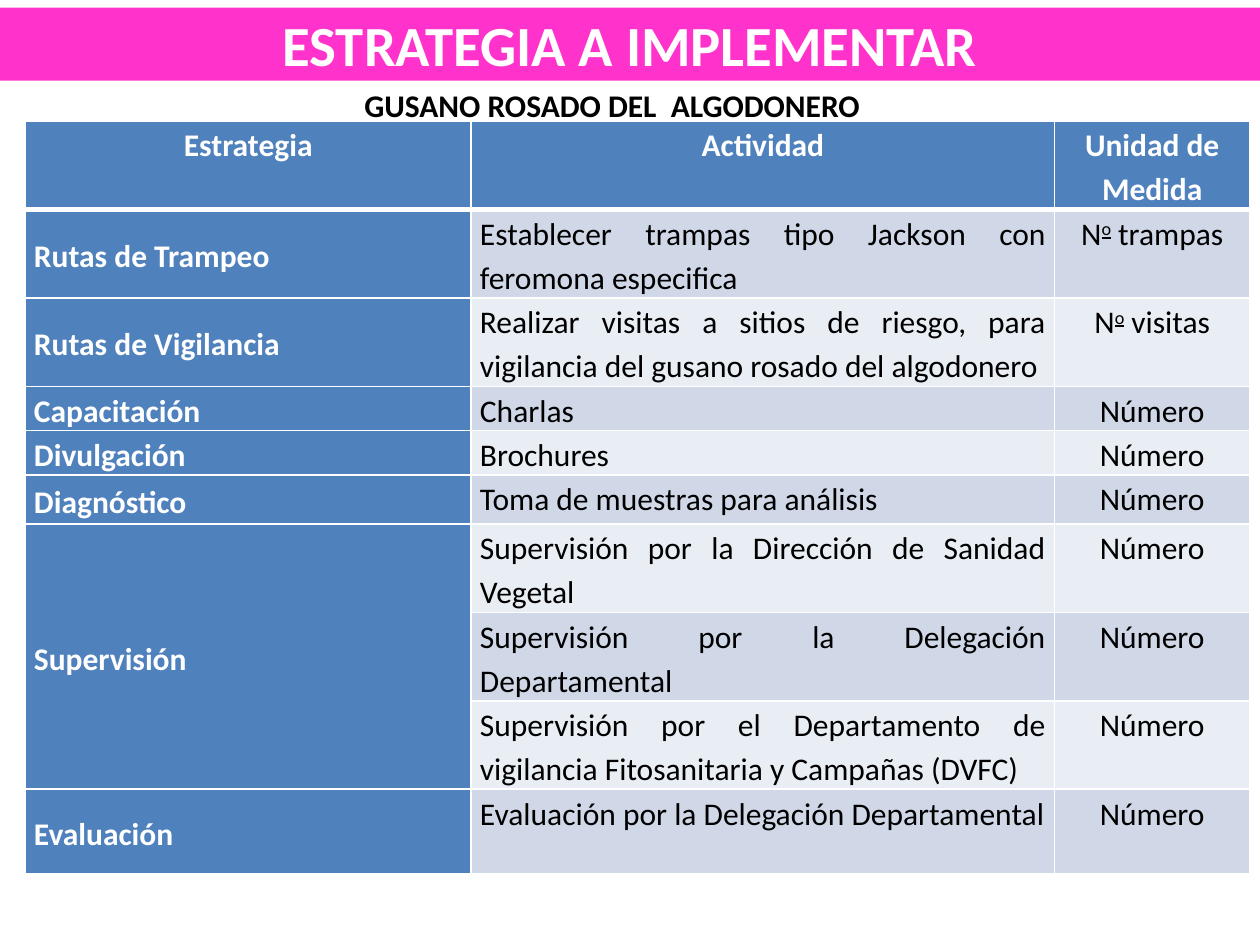
from dataclasses import dataclass

from lxml import etree
from pptx import Presentation
from pptx.dml.color import RGBColor
from pptx.enum.text import MSO_ANCHOR, MSO_AUTO_SIZE, PP_ALIGN
from pptx.oxml.ns import qn
from pptx.util import Inches, Pt

CENTER, JUSTIFY = PP_ALIGN.CENTER, PP_ALIGN.JUSTIFY
TOP, MIDDLE = MSO_ANCHOR.TOP, MSO_ANCHOR.MIDDLE
NO_AUTOFIT = MSO_AUTO_SIZE.NONE


@dataclass(frozen=True)
class Theme:
    font: str = "Calibri"
    title_size: float = 32.4
    text_size: float = 18
    banner: str = "FF33CC"
    header: str = "4F81BD"
    bands: tuple = ("E9EDF4", "D0D8E8")
    light: str = "FFFFFF"
    dark: str = "000000"


THEME = Theme()


def add_run(paragraph, text, size, color, bold):
    run = paragraph.add_run()
    run.text = text
    run.font.name = THEME.font
    run.font.size = Pt(size)
    run.font.bold = bold
    run.font.color.rgb = RGBColor.from_string(color)
    return run


def set_borders(cell, widths):
    properties = cell._tc.get_or_add_tcPr()
    for side, width in widths.items():
        line = etree.SubElement(properties, qn(f"a:ln{side}"), w=str(Pt(width)))
        fill = etree.SubElement(line, qn("a:solidFill"))
        etree.SubElement(fill, qn("a:srgbClr"), val=THEME.light)


prs = Presentation()
prs.slide_width, prs.slide_height = Inches(10), Inches(7.5)
slide = prs.slides.add_slide(prs.slide_layouts[5])

# Title banner
title = slide.shapes.title
title.left, title.top = Inches(0), Inches(0.06)
title.width, title.height = Inches(10), Inches(0.58)
title.fill.solid()
title.fill.fore_color.rgb = RGBColor.from_string(THEME.banner)
title.text_frame.auto_size = NO_AUTOFIT
title.text_frame.vertical_anchor = MIDDLE
heading = title.text_frame.paragraphs[0]
heading.alignment = CENTER
add_run(heading, "ESTRATEGIA A IMPLEMENTAR", THEME.title_size, THEME.light, True)

# Strategy table: a blank strategy continues the one above
rows = [
    ("Estrategia", "Actividad", "Unidad de Medida"),
    ("Rutas de Trampeo", "Establecer trampas tipo Jackson con feromona especifica", "No trampas"),
    ("Rutas de Vigilancia",
     "Realizar visitas a sitios de riesgo, para vigilancia del gusano rosado del algodonero",
     "No visitas"),
    ("Capacitación", "Charlas", "Número"),
    ("Divulgación", "Brochures", "Número"),
    ("Diagnóstico", "Toma de muestras para análisis", "Número"),
    ("Supervisión", "Supervisión por la Dirección de Sanidad Vegetal", "Número"),
    ("", "Supervisión por la Delegación Departamental", "Número"),
    ("", "Supervisión por el Departamento de vigilancia Fitosanitaria y Campañas (DVFC)", "Número"),
    ("Evaluación", "Evaluación por la Delegación Departamental", "Número"),
]
column_widths = [3.54, 4.63, 1.55]
row_heights = [0.7, 0.7, 0.7, 0.35, 0.35, 0.39, 0.7, 0.7, 0.7, 0.67]
table = slide.shapes.add_table(
    len(rows), len(column_widths), Inches(0.2), Inches(0.96),
    Inches(sum(column_widths)), Inches(sum(row_heights))).table
for column, width in zip(table.columns, column_widths):
    column.width = Inches(width)
for row, height in zip(table.rows, row_heights):
    row.height = Inches(height)

for r, texts in enumerate(rows):
    for c, text in enumerate(texts):
        cell = table.cell(r, c)
        is_header, is_strategy = r == 0, c == 0
        is_label = is_header or is_strategy
        set_borders(cell, {"L": 1, "R": 1, "T": 3 if r == 1 else 1, "B": 3 if is_header else 1})
        cell.fill.solid()
        cell.fill.fore_color.rgb = RGBColor.from_string(
            THEME.header if is_label else THEME.bands[r % 2])
        cell.margin_left = cell.margin_right = Inches(0.07)
        cell.margin_top = cell.margin_bottom = 0
        cell.vertical_anchor = MIDDLE if is_strategy and not is_header else TOP
        if not text:
            continue
        paragraph = cell.text_frame.paragraphs[0]
        paragraph.alignment = CENTER if is_header or c == 2 else JUSTIFY
        paragraph.line_spacing = 1.15
        # The abbreviation "No" has a raised, underlined o
        parts = ["N", "o", text[2:]] if text.startswith("No ") else [text]
        for part in parts:
            run = add_run(paragraph, part, THEME.text_size,
                          THEME.light if is_label else THEME.dark, is_label)
            if part == "o":
                run.font.underline = True
                run._r.get_or_add_rPr().set("baseline", "30000")

supervision_row = 6
table.cell(supervision_row, 0).merge(table.cell(supervision_row + 2, 0))

# Pest name above the table
pest = slide.shapes.add_textbox(Inches(0.28), Inches(0.63), Inches(9.16), Inches(0.4))
pest.text_frame.word_wrap = True
pest_name = pest.text_frame.paragraphs[0]
pest_name.alignment = CENTER
add_run(pest_name, "GUSANO ROSADO DEL  ALGODONERO", THEME.text_size, THEME.dark, True)

prs.save("out.pptx")
